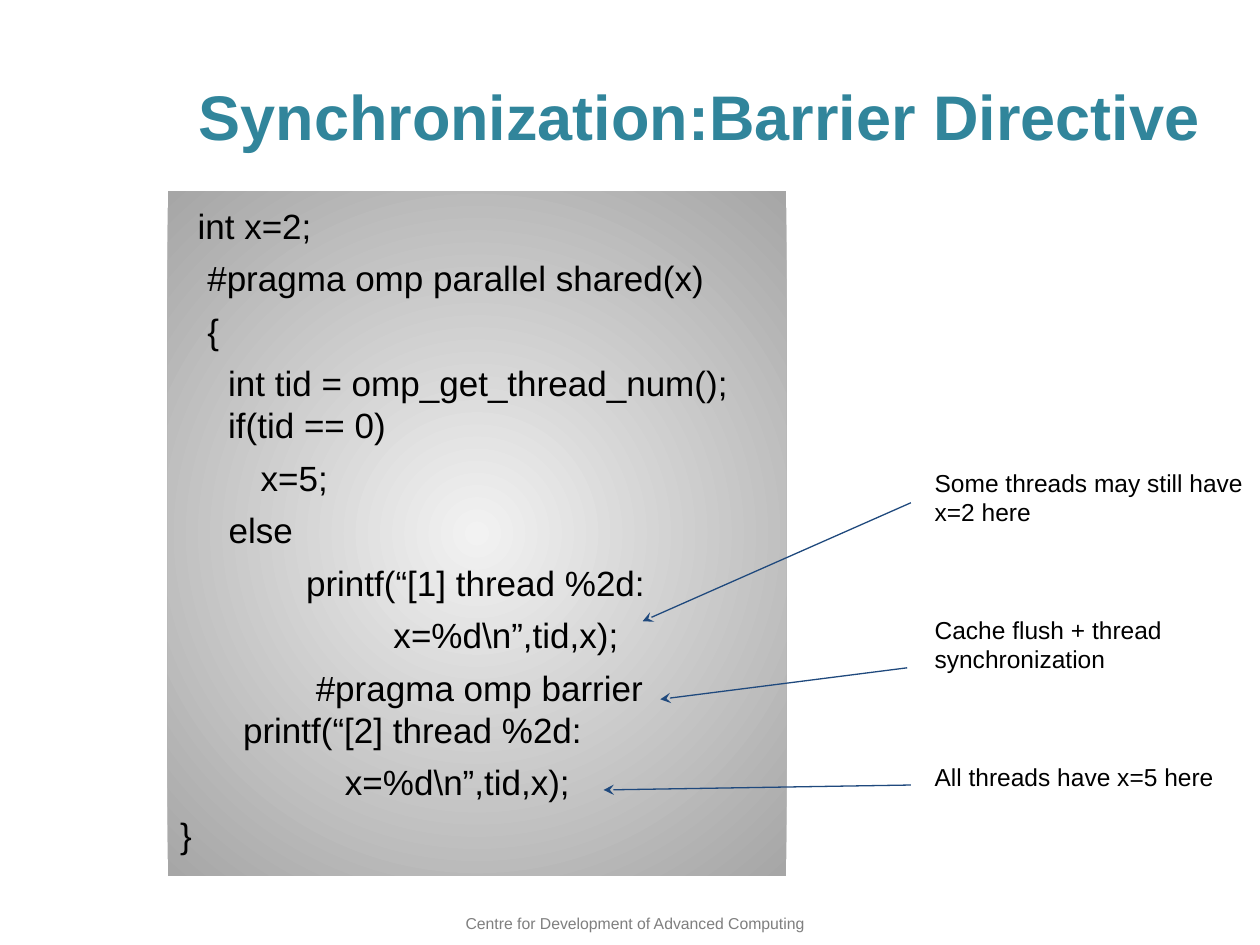
"""Build the slide on the barrier directive."""
from pptx import Presentation
from pptx.dml.color import RGBColor as RGB
from pptx.enum.shapes import MSO_CONNECTOR as CONN, MSO_SHAPE as SHAPE
from pptx.enum.text import MSO_ANCHOR as ANCHOR, PP_ALIGN as ALIGN
from pptx.oxml import parse_xml
from pptx.oxml.ns import nsdecls, qn
from pptx.util import Pt

CODE = [
    ("int x=2;", 27.5, -17.5),
    (" #pragma omp parallel shared(x)", 27.5, -17.5),
    (" {", 27.5, -17.5),
    (" \tint tid = omp_get_thread_num(); if(tid == 0)", 27.5, -17.5),
    ("x=5;", 63.5, -17.5),
    ("     else", 0, 0),
    ("printf(“[1] thread %2d:", 36, 36),
    ("         x=%d\\n”,tid,x);", 36, 36),
    (" #pragma omp barrier printf(“[2] thread %2d:", 36, 36),
    ("    x=%d\\n”,tid,x);", 36, 36),
    ("}", 0, 0),
]
NOTES = [
    "Some threads may still have x=2 here",
    "Cache flush + thread synchronization",
    "All threads have x=5 here",
]
ARROWS = [
    (520.5, 287.3, 367.2, 355),
    (518.4, 381.6, 377.3, 399.6),
    (520.5, 448.6, 344.9, 451.4),
]


def rgb(hex_color):
    """Turn a hex string into a colour."""
    return RGB.from_string(hex_color)


def set_frame(sp, inset=(7.2, 7.2), anchor=ANCHOR.TOP):
    """Set wrapping, insets and anchor of a shape's text and return its frame."""
    tf = sp.text_frame
    dx, dy = map(Pt, inset)
    fmt = dict(word_wrap=True, vertical_anchor=anchor, margin_left=dx,
               margin_right=dx, margin_top=dy, margin_bottom=dy)
    for name, value in fmt.items():
        setattr(tf, name, value)
    return tf


def add_paragraph(tf, text, size, color="000000", bold=False, indent=(0, 0), **fmt):
    """Write the next paragraph of a text frame."""
    p = tf.paragraphs[0] if not tf.text else tf.add_paragraph()
    pPr = p._p.get_or_add_pPr()
    for name, value in zip(("marL", "indent"), indent):
        pPr.set(name, str(int(Pt(value))))
    for name, value in fmt.items():
        setattr(p, name, value)
    r = p.add_run()
    r.text = text
    for name, value in dict(name="Arial", size=Pt(size), bold=bold).items():
        setattr(r.font, name, value)
    r.font.color.rgb = rgb(color)


def add_label(s, box, text, size, color, bold=False, **frame):
    """Add a centred one-line text box."""
    tf = set_frame(s.shapes.add_textbox(*map(Pt, box)), **frame)
    add_paragraph(tf, text, size, color, bold, alignment=ALIGN.CENTER)


def fill_radial(sp, inner, outer):
    """Fill a shape with a gradient running out from its centre."""
    sp.fill.gradient()
    for stop, color in zip(sp.fill.gradient_stops, (inner, outer)):
        stop.color.rgb = rgb(color)
    grad = sp._element.spPr.find(qn("a:gradFill"))
    radial = parse_xml(
        f'<a:path {nsdecls("a")} path="circle">'
        '<a:fillToRect l="50000" t="50000" r="50000" b="50000"/></a:path>')
    grad.replace(grad.find(qn("a:lin")), radial)


def add_code(s, box, lines):
    """Add the shaded panel of code."""
    sp = s.shapes.add_shape(SHAPE.RECTANGLE, *map(Pt, box))
    sp.shadow.inherit = False
    sp.line.fill.background()
    fill_radial(sp, "F2F2F2", "A6A6A6")
    tf = set_frame(sp)
    for i, (text, *indent) in enumerate(lines):
        add_paragraph(tf, text, 20, indent=indent, alignment=ALIGN.LEFT,
                      space_before=Pt(6 if i else 0), line_spacing=Pt(24))


def add_notes(s, box, notes):
    """Add the column of remarks beside the code."""
    tf = set_frame(s.shapes.add_textbox(*map(Pt, box)))
    for i, text in enumerate(notes):
        add_paragraph(tf, text, 14, space_before=Pt(50.4 if i else 0),
                      line_spacing=Pt(16.8))


def add_arrow(s, ends):
    """Add a thin arrow from a remark to its line of code."""
    c = s.shapes.add_connector(CONN.STRAIGHT, *map(Pt, ends))
    c.line.color.rgb = rgb("1F497D")
    c.line.width = Pt(0.75)
    c.line._get_or_add_ln().append(
        parse_xml(f'<a:tailEnd {nsdecls("a")} type="stealth"/>'))
    c._element.spPr.append(parse_xml(f'<a:effectLst {nsdecls("a")}/>'))


def main():
    """Build and save the slide."""
    prs = Presentation()
    prs.slide_width, prs.slide_height = Pt(720), Pt(540)
    s = prs.slides.add_slide(prs.slide_layouts[6])
    add_label(s, (235.4, 518.4, 254.9, 18),
              "Centre for Development of Advanced Computing", 9, "7F7F7F",
              inset=(7.2, 3.6))
    add_code(s, (95.8, 109.4, 353.5, 391), CODE)
    add_label(s, (95.8, 12.2, 607.7, 108), "Synchronization:Barrier Directive",
              36, "31859B", bold=True, anchor=ANCHOR.MIDDLE)
    add_notes(s, (527, 260.2, 192.2, 217.2), NOTES)
    for ends in ARROWS:
        add_arrow(s, ends)
    prs.save("out.pptx")


if __name__ == "__main__":
    main()
